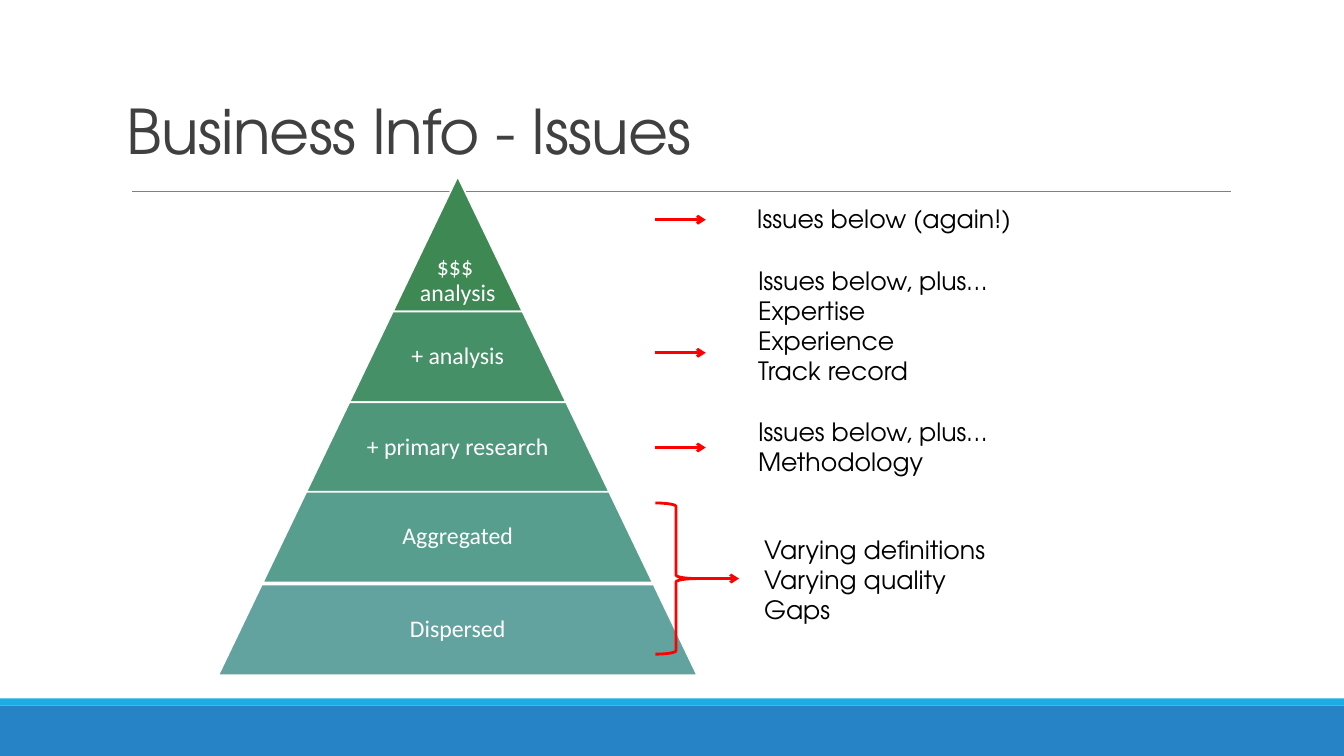
from lxml.etree import SubElement
from pptx import Presentation
from pptx.dml.color import RGBColor
from pptx.enum.shapes import MSO_CONNECTOR, MSO_SHAPE
from pptx.enum.text import MSO_ANCHOR, PP_ALIGN
from pptx.oxml.ns import qn
from pptx.util import Inches, Pt

WIDE, HIGH = 13.33, 7.5
HEAD, BODY = "TeX Gyre Adventor", "Calibri"
COLORS = {"band": "2683C6", "strip": "1CADE4", "rule": "808080",
          "title": "404040", "white": "FFFFFF", "text": "000000",
          "mark": "FF0000"}

TITLE = "Business Info - Issues"
BANDS = [("strip", 6.93, 0.07), ("band", 7, 0.5)]  # colour, top, height

# text, top, height, fill; each width follows from the pyramid's slope
APEX, MID, SLOPE = 1.75, 4.54, 0.96
LAYERS = [
    ("$$$ \vanalysis", 1.75, 1.34, "3E8853"),
    ("+ analysis", 3.09, 0.9, "469067"),
    ("+ primary research", 3.99, 0.9, "4E977B"),
    ("Aggregated", 4.88, 0.9, "579E8E"),
    ("Dispersed", 5.8, 0.9, "62A39F"),
]

# lines, text left, text top, arrow left, arrow height on the slide
ISSUES = [
    (["Issues below (again!)"], 7.41, 1.97, 6.5, 2.18),
    (["Issues below, plus…", "Expertise", "Experience", "Track record"],
     7.42, 2.58, 6.5, 3.5),
    (["Issues below, plus…", "Methodology"], 7.42, 4.08, 6.5, 4.44),
    (["Varying definitions", "Varying quality", "Gaps"],
     7.48, 5.25, 6.83, 5.74),
]
ARROW, LINE = 0.5, 0.3
BRACE = (6.5, 4.99, 0.41, 1.5)


def color(name):
    return RGBColor.from_string(COLORS.get(name, name))


def style(para, face, size, tint):
    para.font.name = face
    para.font.size = Pt(size)
    para.font.color.rgb = color(tint)


def add_shape(slide, kind, box, fill=None, line=None, width=1):
    shape = slide.shapes.add_shape(kind, *map(Inches, box))
    shape.shadow.inherit = False
    if fill:
        shape.fill.solid()
        shape.fill.fore_color.rgb = color(fill)
    else:
        shape.fill.background()
    if line:
        shape.line.color.rgb = color(line)
        shape.line.width = Pt(width)
    else:
        shape.line.fill.background()
    return shape


def add_text(slide, lines, box, size, tint):
    frame = slide.shapes.add_textbox(*map(Inches, box)).text_frame
    frame.word_wrap = True
    frame.text = "\n".join(lines)
    for para in frame.paragraphs:
        style(para, HEAD, size, tint)
    return frame


def add_line(slide, left, right, y, tint, width, arrow=False):
    line = slide.shapes.add_connector(
        MSO_CONNECTOR.STRAIGHT, *map(Inches, (left, y, right, y)))
    line.line.color.rgb = color(tint)
    line.line.width = Pt(width)
    if arrow:
        SubElement(line.line._get_or_add_ln(), qn("a:tailEnd"), type="arrow")
    SubElement(line._element.spPr, qn("a:effectLst"))


def add_layer(slide, text, top, high, fill):
    wide = SLOPE * (top + high - APEX)
    side = min(wide, high)
    tip = top == APEX
    shape = add_shape(slide, MSO_SHAPE.TRAPEZOID,
                      (MID - wide / 2, top, wide, high), fill, "white", 1.25)
    adj = 0.5 if tip else 0.48
    shape.adjustments[0] = adj
    frame = shape.text_frame
    frame.word_wrap = False
    frame.margin_left = frame.margin_right = frame.margin_top = Inches(0.02)
    # A trapezoid's text area starts lower than its top: even that out below
    drop = high / 3 * adj * side / (wide / 2)
    frame.margin_bottom = Inches(0.05 if tip else drop + 0.02)
    frame.vertical_anchor = MSO_ANCHOR.BOTTOM if tip else MSO_ANCHOR.MIDDLE
    frame.text = text
    para = frame.paragraphs[0]
    para.alignment = PP_ALIGN.CENTER
    para.line_spacing = 0.9
    style(para, BODY, 17, "white")


def main():
    deck = Presentation()
    deck.slide_width, deck.slide_height = Inches(WIDE), Inches(HIGH)
    slide = deck.slides.add_slide(deck.slide_layouts[6])

    for fill, top, high in BANDS:
        add_shape(slide, MSO_SHAPE.RECTANGLE, (0, top, WIDE, high), fill)
    add_line(slide, 1.31, 12.21, 1.9, "rule", 0.5)

    frame = add_text(slide, [TITLE], (1.16, 0.83, 9.08, 0.88), 44, "title")
    frame.vertical_anchor = MSO_ANCHOR.BOTTOM
    para = frame.paragraphs[0]
    para.line_spacing = 0.85
    para.runs[0].font._element.set("spc", "-50")

    for layer in LAYERS:
        add_layer(slide, *layer)

    add_shape(slide, MSO_SHAPE.RIGHT_BRACE, BRACE, line="mark", width=2)
    for lines, left, top, start, y in ISSUES:
        box = (left, top, 3.5, LINE * len(lines) + 0.1)
        add_text(slide, lines, box, 18, "text")
        add_line(slide, start, start + ARROW, y, "mark", 2, arrow=True)

    deck.save("out.pptx")


if __name__ == "__main__":
    main()
